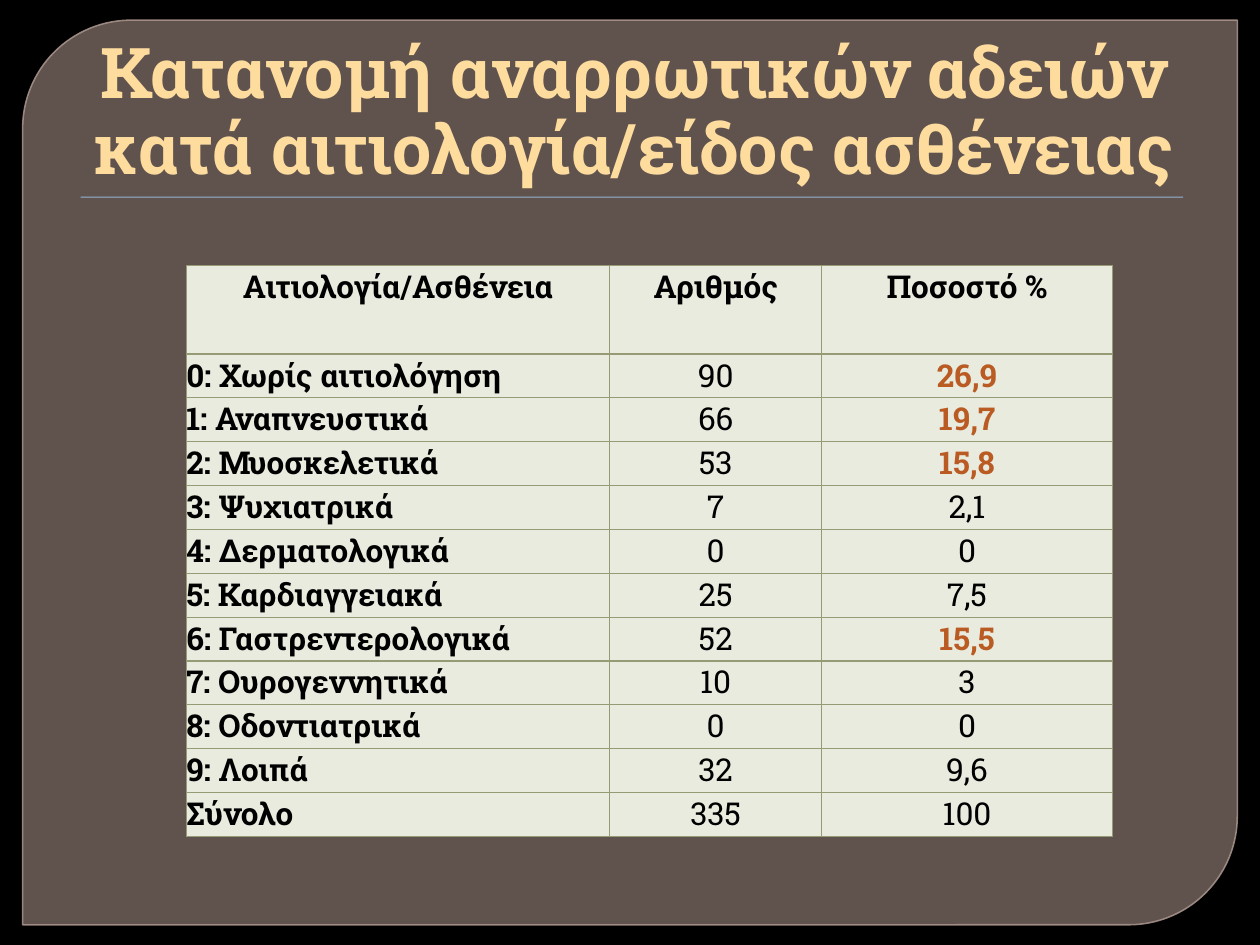
from lxml import etree
from pptx import Presentation
from pptx.dml.color import RGBColor
from pptx.enum import shapes, text
from pptx.oxml import ns
from pptx.util import Inches, Pt

FONT = "Roboto Slab"
BLACK = RGBColor(0x00, 0x00, 0x00)
PANEL = RGBColor(0x94, 0x80, 0x79)
PANEL_LINE = RGBColor(0xA9, 0x94, 0x8D)
RULE = RGBColor(0x94, 0xB6, 0xD2)
TITLE = RGBColor(0xFD, 0xDC, 0x9E)
CELL = RGBColor(0xE9, 0xEB, 0xDF)
BORDER = RGBColor(0x96, 0x9B, 0x75)
HIGHLIGHT = RGBColor(0xB9, 0x5B, 0x22)

HEADER = ("Αιτιολογία/Ασθένεια", "Αριθμός", "Ποσοστό %")
CAUSES = [
    ("0: Χωρίς αιτιολόγηση", "90", "26,9"),
    ("1: Αναπνευστικά", "66", "19,7"),
    ("2: Μυοσκελετικά", "53", "15,8"),
    ("3: Ψυχιατρικά", "7", "2,1"),
    ("4: Δερματολογικά", "0", "0"),
    ("5: Καρδιαγγειακά", "25", "7,5"),
    ("6: Γαστρεντερολογικά", "52", "15,5"),
    ("7: Ουρογεννητικά", "10", "3"),
    ("8: Οδοντιατρικά", "0", "0"),
    ("9: Λοιπά", "32", "9,6"),
    ("Σύνολο", "335", "100"),
]
HIGHLIGHTED = {"26,9", "19,7", "15,8", "15,5"}


def add_borders(cell):
    properties = cell._tc.get_or_add_tcPr()
    for side in ("lnL", "lnR", "lnT", "lnB"):
        line = etree.SubElement(properties, ns.qn("a:" + side), w=str(Pt(0.75)))
        fill = etree.SubElement(line, ns.qn("a:solidFill"))
        etree.SubElement(fill, ns.qn("a:srgbClr"), val=str(BORDER))


presentation = Presentation()
presentation.slide_width = Inches(10)
presentation.slide_height = Inches(7.5)
slide = presentation.slides.add_slide(presentation.slide_layouts[5])
slide.background.fill.solid()
slide.background.fill.fore_color.rgb = BLACK

panel = slide.shapes.add_shape(
    shapes.MSO_SHAPE.ROUND_2_DIAG_RECTANGLE,
    Inches(0.18), Inches(0.16), Inches(9.64), Inches(7.18))
panel.adjustments[0] = 0.12
panel.adjustments[1] = 0
panel.shadow.inherit = False
panel.fill.solid()
panel.fill.fore_color.rgb = PANEL
panel.line.color.rgb = PANEL_LINE
panel.line.width = Pt(0.87)
panel_colors = panel.element.spPr.findall(".//" + ns.qn("a:srgbClr"))
for color, percent in zip(panel_colors, (65, 88)):
    etree.SubElement(color, ns.qn("a:alpha"), val=str(percent * 1000))

rule = slide.shapes.add_shape(
    shapes.MSO_SHAPE.RECTANGLE, Inches(0.64), Inches(1.56), Inches(8.75), Inches(0.01))
rule.shadow.inherit = False
rule.fill.solid()
rule.fill.fore_color.rgb = RULE
rule.line.fill.background()

title = slide.shapes.title
title.element.getparent().append(title.element)
title.left, title.top = Inches(0.5), Inches(0.28)
title.width, title.height = Inches(9), Inches(1.25)
frame = title.text_frame
frame.text = "Κατανομή αναρρωτικών αδειών κατά αιτιολογία/είδος ασθένειας"
frame.word_wrap = True
frame.auto_size = text.MSO_AUTO_SIZE.NONE
frame.vertical_anchor = text.MSO_ANCHOR.BOTTOM
frame.margin_bottom = Inches(0.02)
paragraph = frame.paragraphs[0]
paragraph.alignment = text.PP_ALIGN.CENTER
paragraph.line_spacing = 0.91
paragraph._p.get_or_add_pPr().set("marL", str(Inches(0.06)))
font = paragraph.runs[0].font
font.name, font.size, font.bold = FONT, Pt(40), True
font.color.rgb = TITLE

rows = [HEADER] + CAUSES
table = slide.shapes.add_table(
    len(rows), len(HEADER), Inches(1.48), Inches(2.11), Inches(7.35), Inches(4.53)).table
for column, width in zip(table.columns, (3.36, 1.68, 2.31)):
    column.width = Inches(width)
for row_index, values in enumerate(rows):
    is_header = row_index == 0
    table.rows[row_index].height = Inches(0.7) if is_header else Inches(3.83 / len(CAUSES))
    for column_index, value in enumerate(values):
        cell = table.cell(row_index, column_index)
        is_label = column_index == 0
        is_highlighted = value in HIGHLIGHTED
        cell.margin_left = cell.margin_right = cell.margin_top = cell.margin_bottom = 0
        add_borders(cell)
        cell.fill.solid()
        cell.fill.fore_color.rgb = CELL
        cell.text_frame.text = value
        paragraph = cell.text_frame.paragraphs[0]
        centred = is_header or not is_label
        paragraph.alignment = text.PP_ALIGN.CENTER if centred else text.PP_ALIGN.LEFT
        font = paragraph.runs[0].font
        font.name, font.size = FONT, Pt(18)
        font.bold = is_header or is_label or is_highlighted
        font.color.rgb = HIGHLIGHT if is_highlighted else BLACK

presentation.save("out.pptx")
